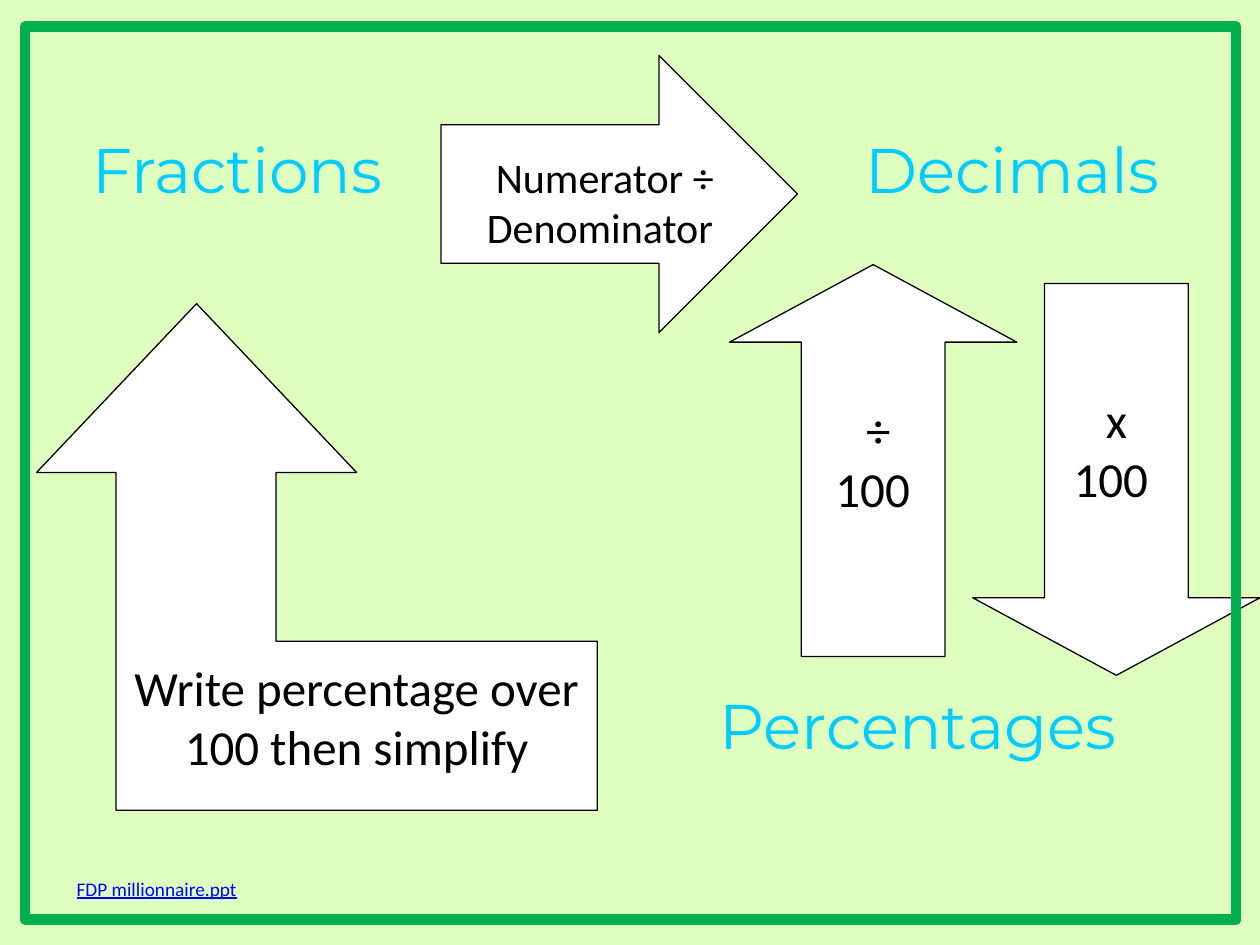
from lxml import etree
from pptx import Presentation
from pptx.dml.color import RGBColor
from pptx.enum.shapes import MSO_SHAPE
from pptx.enum.text import PP_ALIGN
from pptx.oxml.ns import qn
from pptx.util import Inches, Pt

RIGHT_ARROW = MSO_SHAPE.RIGHT_ARROW
DOWN_ARROW = MSO_SHAPE.DOWN_ARROW
UP_ARROW = MSO_SHAPE.UP_ARROW
RECTANGLE = MSO_SHAPE.RECTANGLE
LEFT, CENTER = PP_ALIGN.LEFT, PP_ALIGN.CENTER

PALE_GREEN = RGBColor(0xDF, 0xFF, 0xBF)
GREEN = RGBColor(0x00, 0xB0, 0x50)
SKY_BLUE = RGBColor(0x00, 0xCC, 0xFF)
LINK_BLUE = RGBColor(0x00, 0x00, 0xFF)
BLACK = RGBColor(0x00, 0x00, 0x00)
WHITE = RGBColor(0xFF, 0xFF, 0xFF)

presentation = Presentation()
presentation.slide_width = Inches(10)
presentation.slide_height = Inches(7.5)
slide = presentation.slides.add_slide(presentation.slide_layouts[6])
slide.background.fill.solid()
slide.background.fill.fore_color.rgb = PALE_GREEN


def add_text(text, left, top, width, height, size=28, font="Calibri",
             color=BLACK, align=CENTER, underline=None):
    """Add a wrapping text box with one paragraph per line of text."""
    box = slide.shapes.add_textbox(
        Inches(left), Inches(top), Inches(width), Inches(height))
    frame = box.text_frame
    frame.word_wrap = True
    frame.text = text
    for paragraph in frame.paragraphs:
        paragraph.alignment = align
        for run in paragraph.runs:
            run.font.name = font
            run.font.size = Pt(size)
            run.font.color.rgb = color
            run.font.underline = underline


def style_arrow(shape):
    shape.shadow.inherit = False
    shape.fill.solid()
    shape.fill.fore_color.rgb = WHITE
    shape.line.color.rgb = BLACK
    shape.line.width = Pt(0.75)


# Headings
for text, left, top, width, height in [
    ("Fractions", 0.35, 0.99, 3.07, 0.93),
    ("Decimals", 6.5, 0.99, 3.07, 0.94),
    ("Percentages", 5, 5.4, 4.57, 1.06),
]:
    add_text(text, left, top, width, height,
             size=36, font="Montserrat", color=SKY_BLUE)

# Straight arrows
for kind, left, top, width, height, head in [
    (RIGHT_ARROW, 3.5, 0.44, 2.83, 2.2, 0.5),
    (DOWN_ARROW, 7.72, 2.25, 2.28, 3.11, 0.27),
    (UP_ARROW, 5.79, 2.1, 2.28, 3.11, 0.27),
]:
    arrow = slide.shapes.add_shape(
        kind, Inches(left), Inches(top), Inches(width), Inches(height))
    arrow.adjustments[0] = 0.5
    arrow.adjustments[1] = head
    style_arrow(arrow)

# Bent arrow from percentages to fractions
bent_points = [(2.83, 3.75), (2.19, 3.75), (2.19, 5.09), (4.74, 5.09),
               (4.74, 6.43), (0.92, 6.43), (0.92, 3.75), (0.29, 3.75)]
builder = slide.shapes.build_freeform(Inches(1.56), Inches(2.41))
builder.add_line_segments([(Inches(x), Inches(y)) for x, y in bent_points])
style_arrow(builder.convert_to_shape())

# Arrow labels
add_text("Write percentage over\n100 then simplify", 0.67, 5.17, 4.32, 1.3)
add_text("Numerator ÷ Denominator ", 3.66, 1.15, 2.28, 0.91, size=24)
add_text("÷ 100 ", 6.5, 3.12, 0.94, 1.04)
add_text("x 100 ", 8.39, 3.04, 0.94, 1.04)

# Border with rounded joins
border = slide.shapes.add_shape(
    RECTANGLE, Inches(0.2), Inches(0.21), Inches(9.61), Inches(7.09))
border.shadow.inherit = False
border.fill.background()
border.line.color.rgb = GREEN
border.line.width = Pt(6)
etree.SubElement(border.line._get_or_add_ln(), qn("a:round"))

add_text("FDP millionnaire.ppt", 0.51, 6.91, 2.99, 0.29,
         size=11, color=LINK_BLUE, align=LEFT, underline=True)

presentation.save("out.pptx")
